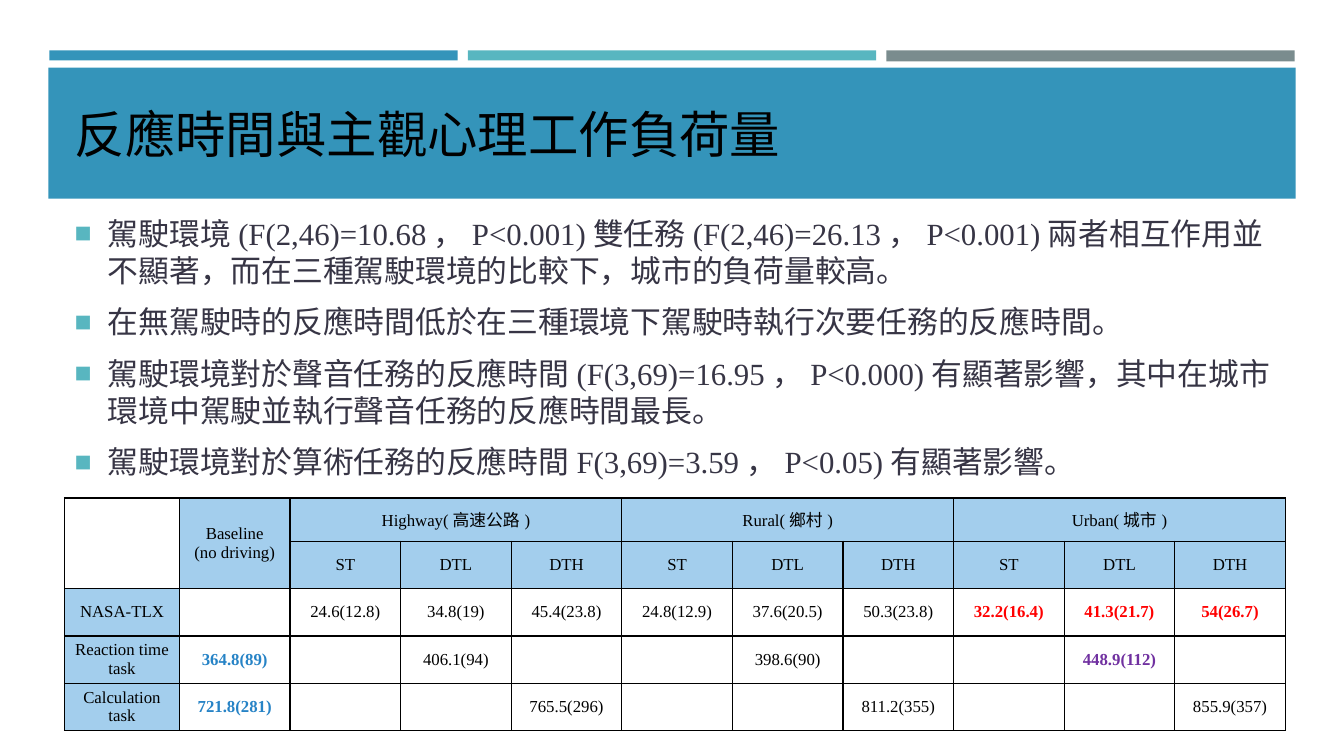
from dataclasses import dataclass

import pptx
import pptx.dml.color
import pptx.enum.shapes
import pptx.enum.text
import pptx.oxml
import pptx.oxml.ns
import pptx.slide
import pptx.table
import pptx.text.text
import pptx.util
from pptx.dml.color import RGBColor
from pptx.util import Inches, Pt

FONT = "Times New Roman"
BLUE = RGBColor(0x34, 0x94, 0xBA)
TEAL = RGBColor(0x58, 0xB6, 0xC0)
GRAY = RGBColor(0x7A, 0x8C, 0x8E)
BLACK = RGBColor(0, 0, 0)
WHITE = RGBColor(0xFF, 0xFF, 0xFF)
BODY_COLOR = RGBColor(0x37, 0x35, 0x45)
HEADER_FILL = RGBColor(0xA3, 0xCE, 0xED)
BASELINE_BLUE = RGBColor(0x26, 0x83, 0xC6)
URBAN_RED = RGBColor(0xFF, 0, 0)
URBAN_PURPLE = RGBColor(0x70, 0x30, 0xA0)


@dataclass(frozen=True)
class Band:
    left: float
    top: float
    width: float
    height: float
    color: RGBColor


BANDS = [
    Band(0.49, 0.5, 4.05, 0.1, BLUE),
    Band(4.64, 0.5, 4.05, 0.1, TEAL),
    Band(8.79, 0.5, 4.05, 0.11, GRAY),
    Band(0.48, 0.67, 12.37, 1.3, BLUE),
]

TITLE = "反應時間與主觀心理工作負荷量"
FINDINGS = [
    "駕駛環境(F(2,46)=10.68，P<0.001)雙任務(F(2,46)=26.13，P<0.001)兩者相互作用並不顯著，"
    "而在三種駕駛環境的比較下，城市的負荷量較高。",
    "在無駕駛時的反應時間低於在三種環境下駕駛時執行次要任務的反應時間。",
    "駕駛環境對於聲音任務的反應時間(F(3,69)=16.95，P<0.000)有顯著影響，"
    "其中在城市環境中駕駛並執行聲音任務的反應時間最長。",
    "駕駛環境對於算術任務的反應時間F(3,69)=3.59，P<0.05)有顯著影響。",
]

ENVIRONMENTS = ["Highway(高速公路)", "Rural(鄉村)", "Urban(城市)"]
TASK_LEVELS = ["ST", "DTL", "DTH"]
TABLE_ROWS = [
    ["", "Baseline\n(no driving)"] + [text for name in ENVIRONMENTS for text in (name, "", "")],
    ["", ""] + TASK_LEVELS * len(ENVIRONMENTS),
    ["NASA-TLX", "", "24.6(12.8)", "34.8(19)", "45.4(23.8)", "24.8(12.9)",
     "37.6(20.5)", "50.3(23.8)", "32.2(16.4)", "41.3(21.7)", "54(26.7)"],
    ["Reaction time task", "364.8(89)", "", "406.1(94)", "", "",
     "398.6(90)", "", "", "448.9(112)", ""],
    ["Calculation task", "721.8(281)", "", "", "765.5(296)", "",
     "", "811.2(355)", "", "", "855.9(357)"],
]
HIGHLIGHTS = {
    (2, 8): URBAN_RED, (2, 9): URBAN_RED, (2, 10): URBAN_RED,
    (3, 1): BASELINE_BLUE, (4, 1): BASELINE_BLUE, (3, 9): URBAN_PURPLE,
}
ROW_HEIGHTS = [0.43, 0.47, 0.47, 0.47, 0.47]
TABLE_WIDTH = 12.11
LABEL_WIDTH = 1.14


def set_font(paragraph: pptx.text.text._Paragraph, size: float, color: RGBColor,
             bold: bool = False) -> None:
    paragraph.font.name = FONT
    paragraph.font.size = Pt(size)
    paragraph.font.bold = bold
    paragraph.font.color.rgb = color


def add_band(slide: pptx.slide.Slide, band: Band) -> None:
    shape = slide.shapes.add_shape(
        pptx.enum.shapes.MSO_SHAPE.RECTANGLE,
        Inches(band.left), Inches(band.top), Inches(band.width), Inches(band.height))
    shape.shadow.inherit = False
    shape.fill.solid()
    shape.fill.fore_color.rgb = band.color
    shape.line.fill.background()


def add_bullet(paragraph: pptx.text.text._Paragraph) -> None:
    properties = paragraph._p.get_or_add_pPr()
    properties.set("marL", str(Inches(0.33)))
    properties.set("indent", str(-Inches(0.33)))
    namespace = pptx.oxml.ns.nsdecls("a")
    bullet_parts = [
        f'<a:buClr {namespace}><a:srgbClr val="{TEAL}"/></a:buClr>',
        f'<a:buSzPct {namespace} val="92000"/>',
        f'<a:buChar {namespace} char="■"/>',
    ]
    for part in bullet_parts:
        properties.append(pptx.oxml.parse_xml(part))


def fill_title(slide: pptx.slide.Slide) -> None:
    title = slide.shapes.title
    title.left, title.top = Inches(0.64), Inches(0.77)
    title.width, title.height = Inches(12.06), Inches(1.11)
    frame = title.text_frame
    frame.text = TITLE
    frame.auto_size = pptx.enum.text.MSO_AUTO_SIZE.NONE
    frame.vertical_anchor = pptx.enum.text.MSO_ANCHOR.MIDDLE
    frame.paragraphs[0].alignment = pptx.enum.text.PP_ALIGN.LEFT
    set_font(frame.paragraphs[0], 36, BLACK)


def fill_findings(slide: pptx.slide.Slide) -> None:
    body = slide.placeholders[1]
    body.left, body.top = Inches(0.64), Inches(2.08)
    body.width, body.height = Inches(12.06), Inches(4.02)
    frame = body.text_frame
    frame.text = "\n".join(FINDINGS)
    frame.auto_size = pptx.enum.text.MSO_AUTO_SIZE.NONE
    frame.vertical_anchor = pptx.enum.text.MSO_ANCHOR.TOP
    for paragraph in frame.paragraphs:
        paragraph.space_before = Pt(4.4)
        paragraph.space_after = Pt(6)
        add_bullet(paragraph)
        set_font(paragraph, 22, BODY_COLOR)


def add_borders(cell: pptx.table._Cell) -> None:
    properties = cell._tc.get_or_add_tcPr()
    for position, side in enumerate(("lnL", "lnR", "lnT", "lnB")):
        properties.insert(position, pptx.oxml.parse_xml(
            f'<a:{side} {pptx.oxml.ns.nsdecls("a")} w="{Pt(1)}"><a:solidFill>'
            f'<a:srgbClr val="{BLACK}"/></a:solidFill></a:{side}>'))


def format_cell(cell: pptx.table._Cell, text: str, fill: RGBColor,
                highlight: RGBColor | None) -> None:
    cell.text = text
    cell.fill.solid()
    cell.fill.fore_color.rgb = fill
    cell.vertical_anchor = pptx.enum.text.MSO_ANCHOR.MIDDLE
    cell.margin_left = cell.margin_right = Inches(0.07)
    cell.margin_top = cell.margin_bottom = Inches(0.02)
    for paragraph in cell.text_frame.paragraphs:
        paragraph.alignment = pptx.enum.text.PP_ALIGN.CENTER
        set_font(paragraph, 12, highlight or BLACK, highlight is not None)
    add_borders(cell)


def add_results_table(slide: pptx.slide.Slide) -> None:
    column_count = len(TABLE_ROWS[0])
    table = slide.shapes.add_table(
        len(TABLE_ROWS), column_count, Inches(0.64), Inches(4.94),
        Inches(TABLE_WIDTH), Inches(sum(ROW_HEIGHTS))).table
    table.first_row = table.horz_banding = False
    value_width = (TABLE_WIDTH - LABEL_WIDTH) / (column_count - 1)
    for index, column in enumerate(table.columns):
        column.width = Inches(value_width if index else LABEL_WIDTH)
    for row, height in zip(table.rows, ROW_HEIGHTS):
        row.height = Inches(height)

    for row_index, texts in enumerate(TABLE_ROWS):
        for column_index, text in enumerate(texts):
            is_header = column_index > 0 if row_index < 2 else column_index == 0
            format_cell(table.cell(row_index, column_index), text,
                        HEADER_FILL if is_header else WHITE,
                        HIGHLIGHTS.get((row_index, column_index)))

    # Header spans
    for column_index in (0, 1):
        table.cell(0, column_index).merge(table.cell(1, column_index))
    for first in range(2, column_count, len(TASK_LEVELS)):
        table.cell(0, first).merge(table.cell(0, first + len(TASK_LEVELS) - 1))


def main() -> None:
    presentation = pptx.Presentation()
    presentation.slide_width, presentation.slide_height = Inches(13.33), Inches(7.5)
    slide = presentation.slides.add_slide(presentation.slide_layouts[1])

    # Bands go behind the placeholders
    for band in BANDS:
        add_band(slide, band)
    for placeholder in list(slide.placeholders):
        slide.shapes._spTree.append(placeholder._element)

    # Title, findings and results
    fill_title(slide)
    fill_findings(slide)
    add_results_table(slide)
    presentation.save("out.pptx")


if __name__ == "__main__":
    main()
